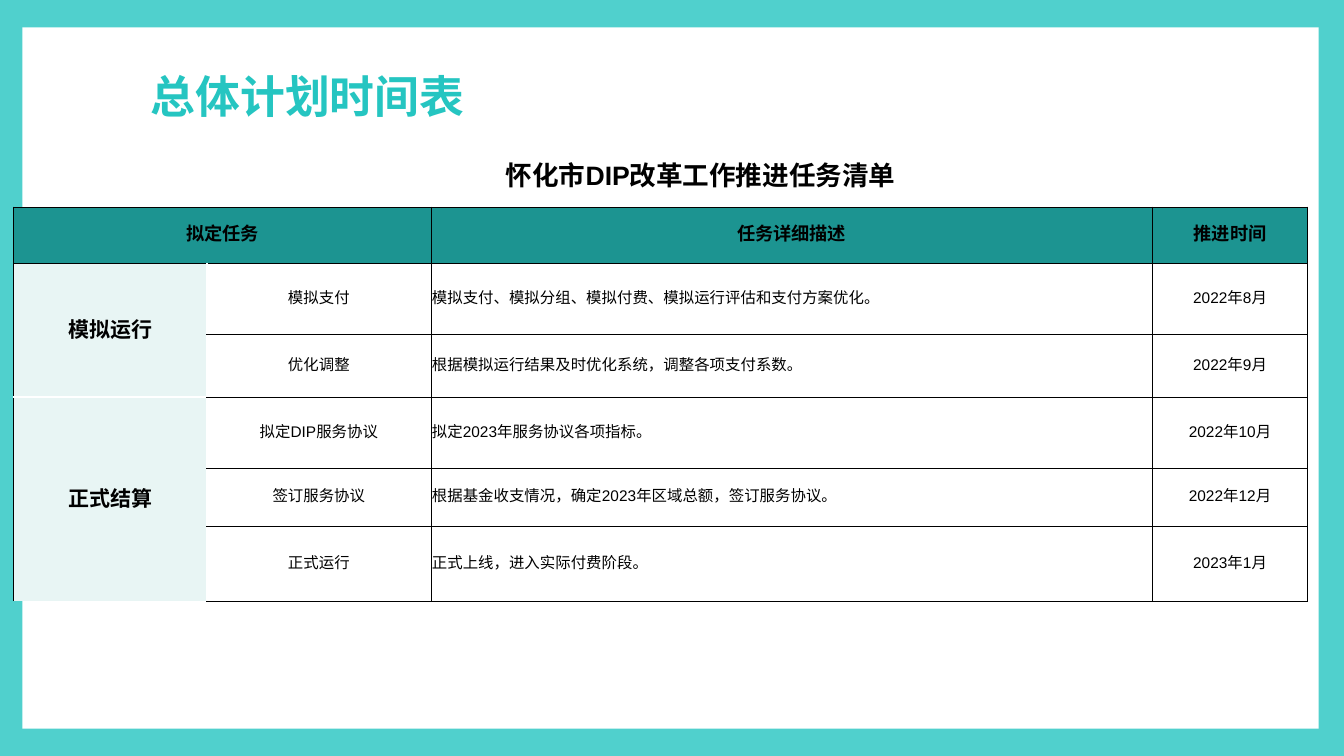
from dataclasses import dataclass
from itertools import product

from lxml import etree
from pptx import Presentation
from pptx.dml.color import RGBColor
from pptx.enum.shapes import MSO_SHAPE
from pptx.enum.text import MSO_ANCHOR, PP_ALIGN
from pptx.oxml.ns import qn
from pptx.util import Pt

RECTANGLE = MSO_SHAPE.RECTANGLE
MIDDLE = MSO_ANCHOR.MIDDLE
LEFT, CENTER = PP_ALIGN.LEFT, PP_ALIGN.CENTER


@dataclass(frozen=True)
class Theme:
    teal: str = "25C5C1"
    header: str = "1C9491"
    group: str = "E8F5F4"
    white: str = "FFFFFF"
    black: str = "000000"
    latin: str = "Arial"
    chinese: str = "Noto Sans CJK SC"
    title_size: float = 32
    caption_size: float = 19
    header_size: float = 13
    group_size: float = 15
    body_size: float = 11


THEME = Theme()


@dataclass(frozen=True)
class Edge:
    color: str
    width: float


GRID = Edge(THEME.black, 0.5)
GAP = Edge(THEME.white, 1)


@dataclass(frozen=True)
class Panel:
    left: float
    top: float
    width: float
    height: float
    color: str
    opacity: int = 100


@dataclass(frozen=True)
class Block:
    row: int
    col: int
    text: str
    rows: int = 1
    cols: int = 1
    size: float = THEME.body_size
    bold: bool = False
    align: PP_ALIGN = CENTER
    fill: str | None = None
    left: Edge | None = GRID
    right: Edge | None = GRID
    top: Edge | None = GRID
    bottom: Edge | None = GRID


@dataclass(frozen=True)
class Task:
    name: str
    detail: str
    due: str


@dataclass(frozen=True)
class Phase:
    name: str
    tasks: tuple[Task, ...]


SLIDE_WIDTH, SLIDE_HEIGHT = 960, 540
HALF = SLIDE_HEIGHT / 2
PANELS = (
    Panel(0, 0, SLIDE_WIDTH, HALF, THEME.teal, 80),
    Panel(0, HALF, SLIDE_WIDTH, HALF, THEME.teal, 80),
    Panel(16, 19.5, 926, 501, THEME.white),
)
COLUMN_WIDTHS = (56.9, 81.1, 160, 515.3, 111.1)
ROW_HEIGHTS = (44, 40, 50.7, 45, 50.7, 41.5, 53.5)
PHASES = (
    Phase("模拟运行", (
        Task("模拟支付", "模拟支付、模拟分组、模拟付费、模拟运行评估和支付方案优化。", "2022年8月"),
        Task("优化调整", "根据模拟运行结果及时优化系统，调整各项支付系数。", "2022年9月"),
    )),
    Phase("正式结算", (
        Task("拟定DIP服务协议", "拟定2023年服务协议各项指标。", "2022年10月"),
        Task("签订服务协议", "根据基金收支情况，确定2023年区域总额，签订服务协议。", "2022年12月"),
        Task("正式运行", "正式上线，进入实际付费阶段。", "2023年1月"),
    )),
)


def write_text(frame, text: str, *, size: float, color: str = THEME.black,
               bold: bool = False, align: PP_ALIGN = LEFT,
               font: str = THEME.latin, line_height: float | None = None) -> None:
    frame.word_wrap = True
    paragraph = frame.paragraphs[0]
    paragraph.alignment = align
    if line_height:
        paragraph.line_spacing = Pt(line_height)
    run = paragraph.add_run()
    run.text = text
    run.font.size = Pt(size)
    run.font.bold = bold
    run.font.name = font
    run.font.color.rgb = RGBColor.from_string(color)
    etree.SubElement(run.font._element, qn("a:ea"), typeface=THEME.chinese)


def draw_panel(slide, panel: Panel) -> None:
    shape = slide.shapes.add_shape(RECTANGLE, Pt(panel.left), Pt(panel.top),
                                   Pt(panel.width), Pt(panel.height))
    shape.shadow.inherit = False
    shape.line.fill.background()
    shape.fill.solid()
    shape.fill.fore_color.rgb = RGBColor.from_string(panel.color)
    if panel.opacity < 100:
        tint = shape._element.spPr.find(".//" + qn("a:srgbClr"))
        etree.SubElement(tint, qn("a:alpha"), val=str(panel.opacity * 1000))


def set_edge(cell, side: str, edge: Edge | None) -> None:
    line = etree.SubElement(cell._tc.get_or_add_tcPr(), qn(f"a:ln{side}"))
    if edge is None:
        line.set("w", "0")
        etree.SubElement(line, qn("a:noFill"))
        return
    line.set("w", str(Pt(edge.width)))
    paint = etree.SubElement(line, qn("a:solidFill"))
    etree.SubElement(paint, qn("a:srgbClr"), val=edge.color)


def draw_block(table, block: Block) -> None:
    last_row = block.row + block.rows - 1
    last_col = block.col + block.cols - 1
    for row, col in product(range(block.row, last_row + 1), range(block.col, last_col + 1)):
        cell = table.cell(row, col)
        set_edge(cell, "L", block.left if col == block.col else None)
        set_edge(cell, "R", block.right if col == last_col else None)
        set_edge(cell, "T", block.top if row == block.row else None)
        set_edge(cell, "B", block.bottom if row == last_row else None)
        if block.fill:
            cell.fill.solid()
            cell.fill.fore_color.rgb = RGBColor.from_string(block.fill)
        else:
            cell.fill.background()
    anchor = table.cell(block.row, block.col)
    if block.rows * block.cols > 1:
        anchor.merge(table.cell(last_row, last_col))
    anchor.vertical_anchor = MIDDLE
    anchor.margin_left = anchor.margin_right = anchor.margin_top = Pt(0.75)
    anchor.margin_bottom = Pt(3.6)
    if block.text:
        write_text(anchor.text_frame, block.text, size=block.size,
                   bold=block.bold, align=block.align)


def plan_blocks() -> list[Block]:
    open_sides = dict(left=None, right=None, top=None)
    heading = dict(size=THEME.header_size, bold=True, fill=THEME.header)
    blocks = [
        Block(0, 0, "", **open_sides),
        Block(0, 1, "怀化市DIP改革工作推进任务清单", cols=4,
              size=THEME.caption_size, bold=True, **open_sides),
        Block(1, 0, "拟定任务", cols=3, **heading),
        Block(1, 3, "任务详细描述", **heading),
        Block(1, 4, "推进时间", **heading),
    ]
    row = 2
    for phase in PHASES:
        blocks.append(Block(
            row, 0, phase.name, rows=len(phase.tasks), cols=2,
            size=THEME.group_size, bold=True, fill=THEME.group, right=GAP,
            top=GRID if phase is PHASES[0] else GAP,
            bottom=GRID if phase is PHASES[-1] else GAP))
        for task in phase.tasks:
            blocks += [Block(row, 2, task.name, left=GAP),
                       Block(row, 3, task.detail, align=LEFT),
                       Block(row, 4, task.due)]
            row += 1
    return blocks


def draw_schedule(slide) -> None:
    table = slide.shapes.add_table(
        len(ROW_HEIGHTS), len(COLUMN_WIDTHS), Pt(9.8), Pt(103.9),
        Pt(sum(COLUMN_WIDTHS)), Pt(sum(ROW_HEIGHTS))).table
    table.first_row = table.horz_banding = False
    for column, width in zip(table.columns, COLUMN_WIDTHS):
        column.width = Pt(width)
    for row, height in zip(table.rows, ROW_HEIGHTS):
        row.height = Pt(height)
    for block in plan_blocks():
        draw_block(table, block)


def main() -> None:
    deck = Presentation()
    deck.slide_width, deck.slide_height = Pt(SLIDE_WIDTH), Pt(SLIDE_HEIGHT)
    slide = deck.slides.add_slide(deck.slide_layouts[6])
    for panel in PANELS:
        draw_panel(slide, panel)
    title = slide.shapes.add_textbox(Pt(100.5), Pt(42), Pt(616), Pt(46))
    write_text(title.text_frame, "总体计划时间表", size=THEME.title_size, color=THEME.teal,
               bold=True, font=THEME.chinese, line_height=42)
    draw_schedule(slide)
    deck.save("out.pptx")


if __name__ == "__main__":
    main()
